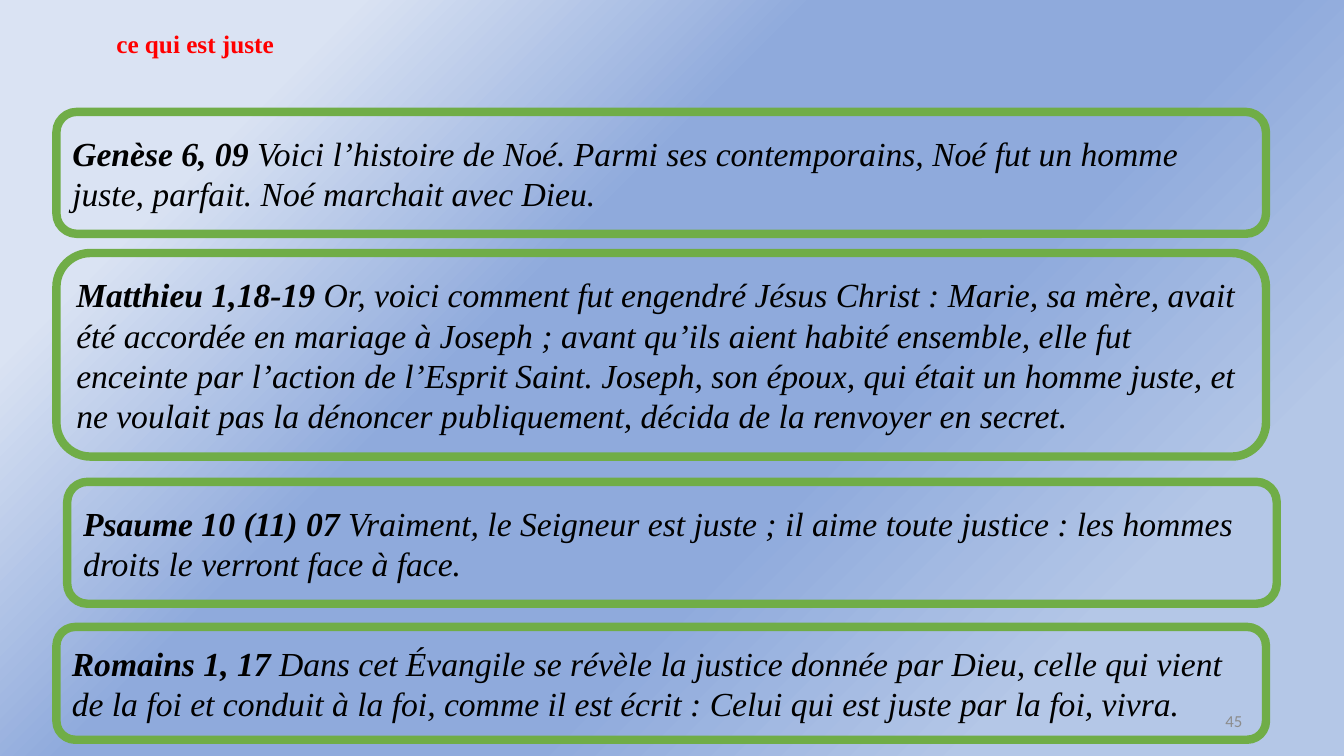
from dataclasses import dataclass

from lxml.etree import SubElement
from pptx import Presentation
from pptx.dml.color import RGBColor
from pptx.enum.shapes import MSO_SHAPE
from pptx.enum.text import MSO_ANCHOR, MSO_AUTO_SIZE, PP_ALIGN
from pptx.oxml.ns import qn
from pptx.util import Emu, Inches, Pt

SERIF = "Times New Roman"
BACKGROUND_STOPS = [(18, "B4C7E7"), (39, "8FAADC"), (61, "8FAADC"), (83, "DAE3F3")]


@dataclass
class Area:
    """A rectangle in percent of the slide's width and height."""
    left: float
    top: float
    width: float
    height: float


@dataclass
class Verse:
    reference: str
    quote: str
    area: Area


VERSES = [
    Verse("Genèse 6, 09 ",
          "Voici l’histoire de Noé. Parmi ses contemporains, Noé fut un homme juste, "
          "parfait. Noé marchait avec Dieu.",
          Area(4.2, 14.8, 90, 16.13)),
    Verse("Matthieu 1,18-19 ",
          "Or, voici comment fut engendré Jésus Christ : Marie, sa mère, avait été accordée "
          "en mariage à Joseph ; avant qu’ils aient habité ensemble, elle fut enceinte par "
          "l’action de l’Esprit Saint. Joseph, son époux, qui était un homme juste, et ne "
          "voulait pas la dénoncer publiquement, décida de la renvoyer en secret.",
          Area(4.2, 33.47, 90, 26.93)),
    Verse("Psaume 10 (11) 07 ",
          "Vraiment, le Seigneur est juste ; il aime toute justice : les hommes droits le "
          "verront face à face.",
          Area(5, 63.73, 90, 16.13)),
    Verse("Romains 1, 17 ",
          "Dans cet Évangile se révèle la justice donnée par Dieu, celle qui vient de la foi "
          "et conduit à la foi, comme il est écrit : Celui qui est juste par la foi, vivra.",
          Area(4.2, 82.93, 90, 14.93)),
]

deck = Presentation()
deck.slide_width, deck.slide_height = Inches(13.33), Inches(7.5)


def color(value: str) -> RGBColor:
    return RGBColor.from_string(value)


def place(area: Area) -> tuple[Emu, Emu, Emu, Emu]:
    across, down = deck.slide_width / 100, deck.slide_height / 100
    return (Emu(round(area.left * across)), Emu(round(area.top * down)),
            Emu(round(area.width * across)), Emu(round(area.height * down)))


def format_font(font, name: str, size: int, value: str,
                bold: bool = False, italic: bool = False) -> None:
    font.name, font.size, font.bold, font.italic = name, Pt(size), bold, italic
    font.color.rgb = color(value)


def paint_background(page) -> None:
    fill = page.background.fill
    fill.gradient()
    fill.gradient_angle = 135  # counter-clockwise
    stops = page.background._cSld.find(".//" + qn("a:gsLst"))
    for stop in list(stops):
        stops.remove(stop)
    for position, value in BACKGROUND_STOPS:
        stop = SubElement(stops, qn("a:gs"), pos=str(position * 1000))
        SubElement(stop, qn("a:srgbClr"), val=value)


def add_title(page, text: str, area: Area) -> None:
    box = page.shapes.title
    box.left, box.top, box.width, box.height = place(area)
    frame = box.text_frame
    frame.text = text
    frame.word_wrap = True
    frame.auto_size = MSO_AUTO_SIZE.SHAPE_TO_FIT_TEXT
    frame.vertical_anchor = MSO_ANCHOR.TOP
    para = frame.paragraphs[0]
    para.alignment, para.line_spacing = PP_ALIGN.CENTER, 1.0
    format_font(para.runs[0].font, SERIF, 18, "FF0000", bold=True)


def add_verse(page, verse: Verse) -> None:
    box = page.shapes.add_shape(MSO_SHAPE.ROUNDED_RECTANGLE, *place(verse.area))
    box.shadow.inherit = False
    box.fill.background()
    box.line.color.rgb, box.line.width = color("70AD47"), Pt(6)
    frame = box.text_frame
    frame.word_wrap = True
    frame.vertical_anchor = MSO_ANCHOR.MIDDLE
    para = frame.paragraphs[0]
    para.alignment = PP_ALIGN.LEFT
    for text, bold in ((verse.reference, True), (verse.quote, False)):
        span = para.add_run()
        span.text = text
        format_font(span.font, SERIF, 24, "000000", bold, italic=True)


def add_page_number(page, text: str, area: Area) -> None:
    frame = page.shapes.add_textbox(*place(area)).text_frame
    frame.text = text
    frame.word_wrap = True
    frame.vertical_anchor = MSO_ANCHOR.MIDDLE
    para = frame.paragraphs[0]
    para.alignment = PP_ALIGN.RIGHT
    format_font(para.runs[0].font, "Calibri", 12, "8C8C8C")


def main() -> None:
    page = deck.slides.add_slide(deck.slide_layouts[5])  # title only
    paint_background(page)
    add_title(page, "ce qui est juste", Area(-2.55, 3.07, 34.13, 5.33))
    for verse in VERSES:
        add_verse(page, verse)
    add_page_number(page, "45", Area(70.67, 92.67, 22.5, 5.33))
    deck.save("out.pptx")


if __name__ == "__main__":
    main()
